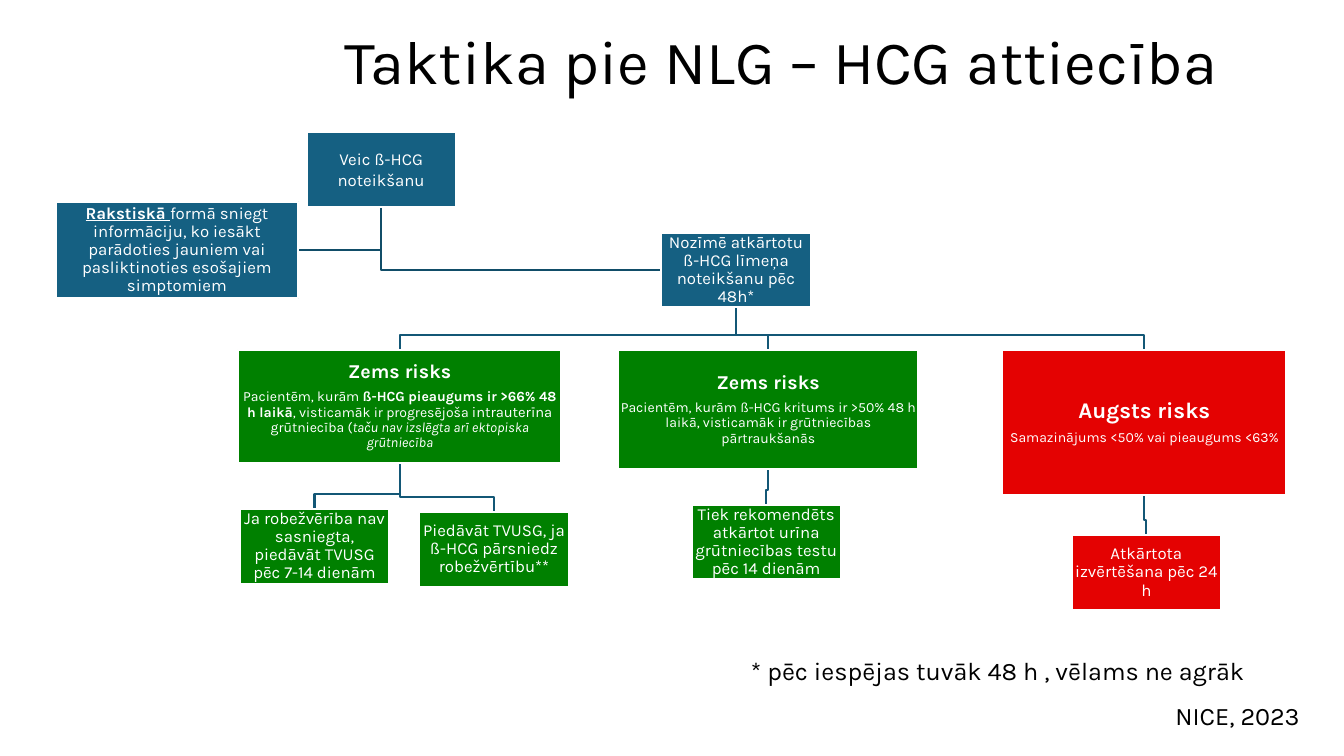
from pptx import Presentation
from pptx.dml.color import RGBColor
from pptx.enum.shapes import MSO_SHAPE
from pptx.enum.text import MSO_ANCHOR, MSO_AUTO_SIZE, PP_ALIGN
from pptx.util import Inches, Pt

RECT = MSO_SHAPE.RECTANGLE
MIDDLE = MSO_ANCHOR.MIDDLE
CENTER, LEFT = PP_ALIGN.CENTER, PP_ALIGN.LEFT
NO_FIT = MSO_AUTO_SIZE.NONE

BLACK = RGBColor(0x00, 0x00, 0x00)
WHITE = RGBColor(0xFF, 0xFF, 0xFF)
BLUE = RGBColor(0x15, 0x60, 0x82)
GREEN = RGBColor(0x00, 0x80, 0x00)
RED = RGBColor(0xE4, 0x02, 0x02)
NAVY = RGBColor(0x11, 0x4D, 0x68)
TEAL = RGBColor(0x13, 0x57, 0x76)

FONT = "Karla"
W, H = 1.48, 0.74  # common box size
BEND = 0.15        # height of the last step above a child box


def add_run(para, text, size, color, style=""):
    run = para.add_run()
    run.text = text
    font = run.font
    font.name, font.size = FONT, Pt(size)
    font.color.rgb = color
    font.bold = "b" in style
    font.italic = "i" in style
    font.underline = "u" in style


def add_line(points, color):
    (x, y), *rest = [(Inches(a), Inches(b)) for a, b in points]
    pen = slide.shapes.build_freeform(x, y)
    pen.add_line_segments(rest, close=False)
    line = pen.convert_to_shape()
    line.shadow.inherit = False
    line.fill.background()
    line.line.color.rgb = color
    line.line.width = Pt(1.5)


prs = Presentation()
prs.slide_width, prs.slide_height = Inches(13.33), Inches(7.5)
slide = prs.slides.add_slide(prs.slide_layouts[5])

# Title
title = slide.shapes.title
title.left, title.top = Inches(3.32), Inches(0)
title.width, title.height = Inches(10), Inches(1.29)
frame = title.text_frame
frame.auto_size, frame.vertical_anchor = NO_FIT, MIDDLE
para = frame.paragraphs[0]
para.alignment, para.line_spacing = LEFT, 0.9
add_run(para, "Taktika pie NLG – HCG attiecība", 44, BLACK)

# Boxes: place, fill, line spacing, paragraphs of (text, size, style) runs
boxes = {
    "start": ((3.04, 1.31, W, H), BLUE, 1.0, [
        [("Veic ß-HCG noteikšanu", 12, "")]]),
    "inform": ((0.55, 2, 2.41, 0.96), BLUE, 0.9, [
        [("Rakstiskā ", 12, "bu"),
         ("formā sniegt informāciju, ko iesākt parādoties jauniem vai "
          "pasliktinoties esošajiem simptomiem", 12, "")]]),
    "repeat": ((6.56, 2.31, W, H), BLUE, 0.9, [
        [("Nozīmē atkārtotu ß-HCG līmeņa noteikšanu pēc 48h*", 12, "")]]),
    "rise": ((2.36, 3.47, 3.21, 1.12), GREEN, 0.9, [
        [("Zems risks", 14, "b")],
        [("Pacientēm, kurām ", 10, ""),
         ("ß-HCG pieaugums ir >66% 48 h laikā", 10, "b"),
         (", visticamāk ir progresējoša ", 10, ""),
         ("intrauterīna", 10.5, ""),
         (" grūtniecība (", 10, ""),
         ("taču nav izslēgta arī ektopiska grūtniecība", 10, "i")]]),
    "fall": ((6.13, 3.47, 2.98, 1.18), GREEN, 0.9, [
        [("Zems risks", 14, "b")],
        [("Pacientēm, kurām ß-HCG kritums ir >50% 48 h laikā, "
          "visticamāk ir grūtniecības pārtraukšanās", 10, "")]]),
    "high": ((9.94, 3.47, 2.82, 1.44), RED, 0.9, [
        [("Augsts risks", 16, "b")],
        [("Samazinājums <50% vai pieaugums <63%", 10, "")]]),
    "later": ((2.38, 5.05, W, H), GREEN, 0.9, [
        [("Ja robežvērība nav sasniegta, piedāvāt TVUSG pēc 7-14 dienām",
          12, "")]]),
    "scan": ((4.16, 5.08, W, H), GREEN, 0.9, [
        [("Piedāvāt TVUSG, ja ß-HCG pārsniedz robežvērtību**", 12, "")]]),
    "test": ((6.86, 5.01, W, H), GREEN, 0.9, [
        [("Tiek rekomendēts atkārtot urīna grūtniecības testu pēc 14 dienām",
          12, "")]]),
    "review": ((10.63, 5.31, W, H), RED, 0.9, [
        [("Atkārtota izvērtēšana pēc 24 h", 12, "")]]),
}

# Lines from the first box to the boxes at its sides
x, y, w, h = boxes["start"][0]
mid, low = x + w / 2, y + h
for name in ("inform", "repeat"):
    left, top, wide, high = boxes[name][0]
    edge = left + wide if left < mid else left
    level = top + high / 2
    add_line([(mid, low), (mid, level), (edge, level)], NAVY)

# Lines from a parent down to its children
tree = {"repeat": ("rise", "fall", "high"), "rise": ("later", "scan"),
        "fall": ("test",), "high": ("review",)}
for parent, kids in tree.items():
    x, y, w, h = boxes[parent][0]
    mid, low = x + w / 2, y + h
    for kid in kids:
        left, top, wide, _ = boxes[kid][0]
        end = left + wide / 2
        add_line([(mid, low), (mid, top - BEND), (end, top - BEND),
                  (end, top)], TEAL)

# Boxes with their text
for place, color, gap, paras in boxes.values():
    box = slide.shapes.add_shape(RECT, *[Inches(v) for v in place])
    box.shadow.inherit = False
    box.fill.solid()
    box.fill.fore_color.rgb = color
    box.line.color.rgb = WHITE
    box.line.width = Pt(1.5)
    frame = box.text_frame
    frame.word_wrap, frame.vertical_anchor = True, MIDDLE
    frame.margin_left = frame.margin_right = Inches(0.01)
    frame.margin_top = frame.margin_bottom = Inches(0.01)
    for i, runs in enumerate(paras):
        para = frame.add_paragraph() if i else frame.paragraphs[0]
        para.alignment, para.line_spacing = CENTER, gap
        para.space_after = Pt(5)
        for text, size, style in runs:
            add_run(para, text, size, WHITE, style)

# Footnote and reference
for left, top, width, text in (
        (7.35, 6.45, 5.9, "* pēc iespējas tuvāk 48 h , vēlams ne agrāk"),
        (11.56, 6.9, 1.7, "NICE, 2023")):
    note = slide.shapes.add_textbox(Inches(left), Inches(top),
                                    Inches(width), Inches(0.4))
    note.text_frame.word_wrap = True
    add_run(note.text_frame.paragraphs[0], text, 18, BLACK)

prs.save("out.pptx")
